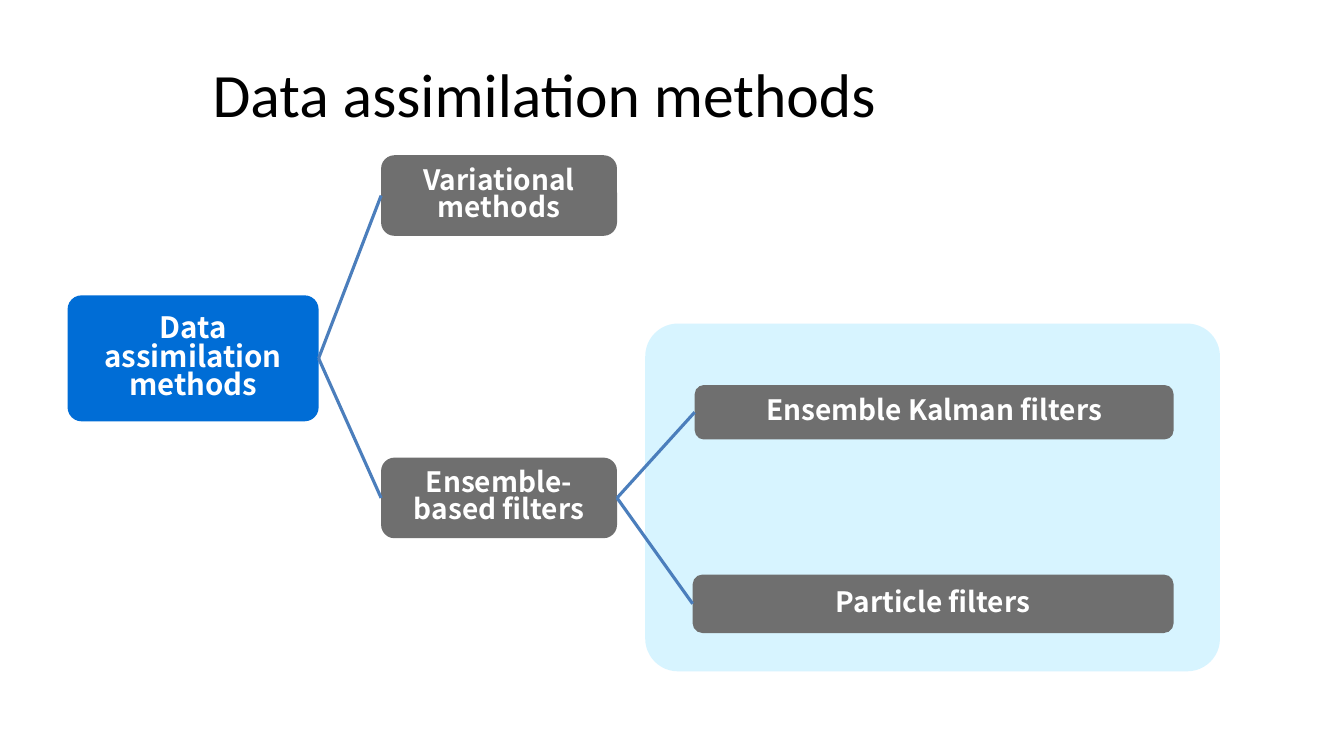
import pptx
import pptx.dml.color
import pptx.enum.shapes
import pptx.enum.text
import pptx.oxml.ns
import pptx.util
from lxml import etree

PX = 9144  # EMU per px, 100 px to the inch
GREY, BLUE, PALE_BLUE, LINE_BLUE = "6F6F6F", "006DD6", "D1F3FF", "4B7EBC"
LEFT_SITE, RIGHT_SITE = 1, 3


def px(*lengths):
    return [pptx.util.Emu(length * PX) for length in lengths]


def rgb(value):
    return pptx.dml.color.RGBColor.from_string(value)


def write(shape, text, size=20, font="Noto Sans CJK SC", color="FFFFFF",
          bold=True, spacing=0.82):
    frame = shape.text_frame
    frame.word_wrap = True
    frame.vertical_anchor = pptx.enum.text.MSO_ANCHOR.MIDDLE
    paragraph = frame.paragraphs[0]
    paragraph.alignment = pptx.enum.text.PP_ALIGN.CENTER
    paragraph.line_spacing = spacing
    run = paragraph.add_run()
    run.text = text
    run.font.size = pptx.util.Pt(size)
    run.font.name = font
    run.font.bold = bold
    run.font.color.rgb = rgb(color)


def add_rounded(slide, box, fill, corner=0.167, opacity=100):
    shape = slide.shapes.add_shape(
        pptx.enum.shapes.MSO_SHAPE.ROUNDED_RECTANGLE, *px(*box))
    shape.adjustments[0] = corner
    shape.shadow.inherit = False
    shape.line.fill.background()
    shape.fill.solid()
    shape.fill.fore_color.rgb = rgb(fill)
    if opacity < 100:
        color = shape.fill._xPr.find(".//" + pptx.oxml.ns.qn("a:srgbClr"))
        etree.SubElement(color, pptx.oxml.ns.qn("a:alpha"), val=str(opacity * 1000))
    return shape


def add_method(slide, text, box, fill=GREY, corner=0.167, size=20):
    method = add_rounded(slide, box, fill, corner)
    write(method, text, size=size)
    return method


def add_branch(slide, parent, child):
    """Join the right side of parent to the left side of child."""
    branch = slide.shapes.add_connector(
        pptx.enum.shapes.MSO_CONNECTOR.STRAIGHT, 0, 0, 0, 0)
    branch.begin_connect(parent, RIGHT_SITE)
    branch.end_connect(child, LEFT_SITE)
    branch.line.width = pptx.util.Pt(2.25)
    branch.line.color.rgb = rgb(LINE_BLUE)
    etree.SubElement(branch._element.spPr, pptx.oxml.ns.qn("a:effectLst"))


def main():
    deck = pptx.Presentation()
    deck.slide_width, deck.slide_height = px(1333, 750)
    slide = deck.slides.add_slide(deck.slide_layouts[6])

    add_rounded(slide, (640, 321, 570, 345), PALE_BLUE, corner=0.094, opacity=85)
    title = slide.shapes.add_textbox(*px(67, 30, 946, 125))
    write(title, "Data assimilation methods", size=44, font="Calibri",
          color="000000", bold=False, spacing=1.0)

    root = add_method(slide, "Data assimilation methods", (67, 293, 249, 125),
                      fill=BLUE, corner=0.111, size=21)
    variational = add_method(slide, "Variational methods", (378, 154, 234, 80))
    ensemble = add_method(slide, "Ensemble-based filters", (378, 454, 234, 80))
    kalman = add_method(slide, "Ensemble Kalman filters", (689, 382, 475, 54))
    particle = add_method(slide, "Particle filters", (687, 570, 477, 58))

    for parent, children in ((root, (variational, ensemble)),
                             (ensemble, (kalman, particle))):
        for child in children:
            add_branch(slide, parent, child)

    deck.save("out.pptx")


if __name__ == "__main__":
    main()
